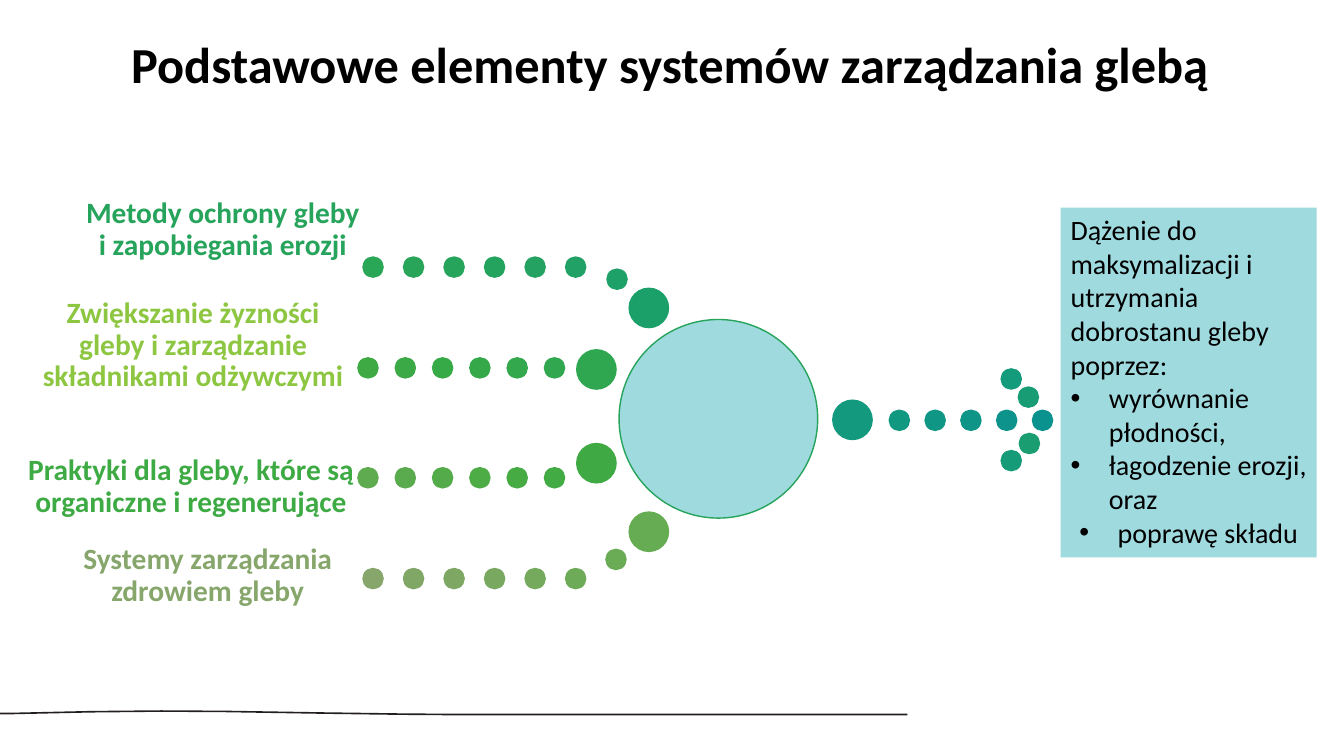
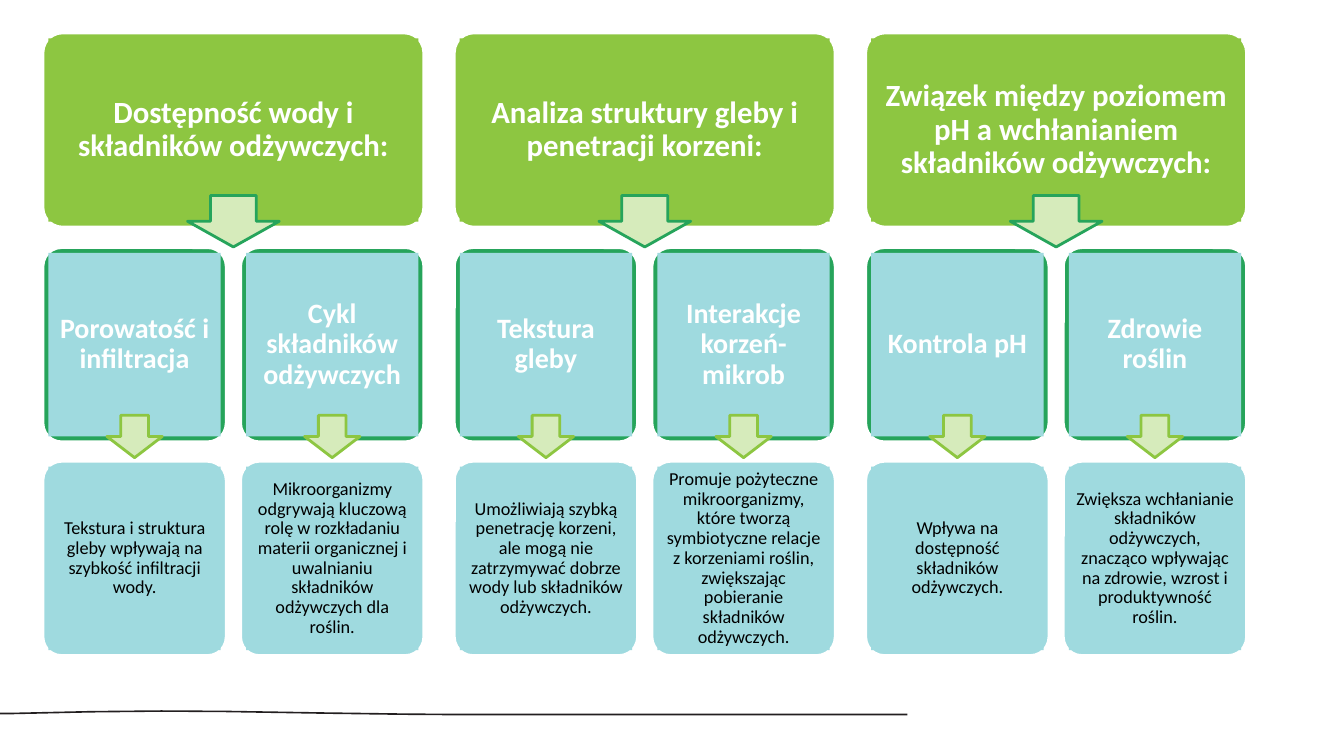
from lxml import etree
from pptx import Presentation
from pptx.dml.color import RGBColor
from pptx.enum.shapes import MSO_SHAPE
from pptx.enum.text import MSO_ANCHOR, PP_ALIGN
from pptx.oxml.ns import qn
from pptx.util import Inches, Pt

OVAL, RECT = MSO_SHAPE.OVAL, MSO_SHAPE.RECTANGLE
ROUNDED, DOWN_ARROW = MSO_SHAPE.ROUNDED_RECTANGLE, MSO_SHAPE.DOWN_ARROW
TOP, MIDDLE, BOTTOM = MSO_ANCHOR.TOP, MSO_ANCHOR.MIDDLE, MSO_ANCHOR.BOTTOM
LEFT, CENTER = PP_ALIGN.LEFT, PP_ALIGN.CENTER

FONT = "Calibri"
BLACK, WHITE, INK = "000000", "FFFFFF", "231F20"
AQUA, LIME, GREEN, PALE = "9FDADF", "8DC641", "26A45B", "D6EBBB"
SMALL_DOT, BIG_DOT = 0.2, 0.39

DOT_ROWS = [
    (8.82, 10.24, 4.07, "119881 0F9685 0E9588 0D938B 0A938E"),
    (3.6, 5.61, 2.55, "2AA657 28A558 26A45B 24A35F 23A261 21A165"),
    (3.55, 5.4, 3.55, "3DAA44 3BA946 37AA48 35A94A 33A84C 31A74F"),
    (3.55, 5.4, 4.64, "5FAB4F 59AB4D 53AC49 4EAC46 47AB44 42AB43"),
    (3.6, 5.61, 5.64, "86A66B 81A767 7EA764 79A861 75AA5C 6EAB58"),
]
SINGLE_DOTS = [
    (9.93, 3.66, SMALL_DOT, "139B7C"), (9.93, 4.47, SMALL_DOT, "169B78"),
    (10.1, 3.84, SMALL_DOT, "189C74"), (10.11, 4.3, SMALL_DOT, "199D71"),
    (6.02, 2.67, SMALL_DOT, "1EA168"), (6.01, 5.45, SMALL_DOT, "6AAB55"),
    (8.26, 3.97, BIG_DOT, "12997E"), (6.24, 2.86, BIG_DOT, "1CA06A"),
    (5.72, 3.47, BIG_DOT, "2FA751"), (5.72, 4.4, BIG_DOT, "3FAA44"),
    (6.24, 5.08, BIG_DOT, "65AC52"),
]
LABELS = [
    (0.84, 2.11, 2.74, 0.49, GREEN, "Metody ochrony gleby i zapobiegania erozji"),
    (0.35, 3.38, 3.13, 0.52, LIME,
     "Zwiększanie żyzności gleby i zarządzanie składnikami odżywczymi"),
    (0.27, 4.71, 3.25, 0.44, "3DAA44",
     "Praktyki dla gleby, które są organiczne i regenerujące"),
    (0.69, 5.54, 2.74, 0.49, "86A66B", "Systemy zarządzania zdrowiem gleby"),
]
GOALS = [
    ("wyrównanie płodności,", LEFT),
    ("łagodzenie erozji, oraz", LEFT),
    ("poprawę składu", CENTER),
]
TOPICS = [
    ("Dostępność wody i składników odżywczych:", [
        ("Porowatość i infiltracja",
         "Tekstura i struktura gleby wpływają na szybkość infiltracji wody."),
        ("Cykl składników odżywczych",
         "Mikroorganizmy odgrywają kluczową rolę w rozkładaniu materii "
         "organicznej i uwalnianiu składników odżywczych dla roślin."),
    ]),
    ("Analiza struktury gleby i penetracji korzeni:", [
        ("Tekstura gleby",
         "Umożliwiają szybką penetrację korzeni, ale mogą nie zatrzymywać "
         "dobrze wody lub składników odżywczych."),
        ("Interakcje korzeń-mikrob",
         "Promuje pożyteczne mikroorganizmy, które tworzą symbiotyczne relacje "
         "z korzeniami roślin, zwiększając pobieranie składników odżywczych."),
    ]),
    ("Związek między poziomem pH a wchłanianiem składników odżywczych:", [
        ("Kontrola pH", "Wpływa na dostępność składników odżywczych."),
        ("Zdrowie roślin",
         "Zwiększa wchłanianie składników odżywczych, znacząco wpływając na "
         "zdrowie, wzrost i produktywność roślin."),
    ]),
]


def rgb(value):
    return RGBColor.from_string(value)


def paint(shape, fill, line=None, weight=1):
    shape.shadow.inherit = False
    shape.fill.solid()
    shape.fill.fore_color.rgb = rgb(fill)
    if line:
        shape.line.color.rgb = rgb(line)
        shape.line.width = Pt(weight)
    else:
        shape.line.fill.background()


def add_box(slide, kind, left, top, width, height, fill, line=None, weight=1):
    box = slide.shapes.add_shape(
        kind, Inches(left), Inches(top), Inches(width), Inches(height))
    paint(box, fill, line, weight)
    return box


def set_frame(frame, anchor, side=0.1, edge=0.05):
    frame.word_wrap = True
    frame.vertical_anchor = anchor
    frame.margin_left = frame.margin_right = Inches(side)
    frame.margin_top = frame.margin_bottom = Inches(edge)


def add_run(paragraph, text, size, color, bold=False, align=CENTER, spacing=None):
    paragraph.alignment = align
    if spacing:
        paragraph.line_spacing = spacing
    run = paragraph.add_run()
    run.text = text
    run.font.name = FONT
    run.font.size = Pt(size)
    run.font.bold = bold
    run.font.color.rgb = rgb(color)


def add_bullet(paragraph, indent=0.38):
    properties = paragraph._p.get_or_add_pPr()
    properties.set("marL", str(Inches(indent)))
    properties.set("indent", str(-Inches(indent)))
    etree.SubElement(properties, qn("a:buFont")).set("typeface", "Arial")
    etree.SubElement(properties, qn("a:buChar")).set("char", "•")


def add_footer_line(prs, slide):
    upper = [(0, 7070), (140, 7070), (900, 7053), (1600, 7046), (2230, 7050),
             (3200, 7066), (4000, 7077), (4430, 7080), (9000, 7080)]
    lower = [(x, y + 16) for x, y in reversed(upper)]
    builder = slide.shapes.build_freeform(*upper[0], scale=Inches(1) / 1000)
    builder.add_line_segments(upper[1:] + lower, close=True)
    footer = builder.convert_to_shape()
    paint(footer, INK)
    prs.slide_master.shapes.element.append(footer.element)


def set_title(slide, text):
    title = slide.shapes.title
    title.left, title.top = Inches(0.73), Inches(0.28)
    title.width, title.height = Inches(11.83), Inches(0.71)
    set_frame(title.text_frame, TOP)
    add_run(title.text_frame.paragraphs[0], text, 36, BLACK, bold=True)


def add_dot(slide, left, top, size, color):
    add_box(slide, OVAL, left, top, size, size, color, color)


def add_dot_row(slide, first, last, top, colors):
    colors = colors.split()
    step = (last - first) / (len(colors) - 1)
    for index, color in enumerate(colors):
        add_dot(slide, first + index * step, top, SMALL_DOT, color)


def add_label(slide, left, top, width, height, color, text):
    label = slide.shapes.add_textbox(
        Inches(left), Inches(top), Inches(width), Inches(height))
    set_frame(label.text_frame, BOTTOM, 0, 0)
    add_run(label.text_frame.paragraphs[0], text, 21, color, True, spacing=0.9)


def add_goals_panel(slide):
    frame = add_box(slide, RECT, 10.52, 2.06, 2.54, 3.47, AQUA).text_frame
    set_frame(frame, TOP)
    add_run(frame.paragraphs[0],
            "Dążenie do maksymalizacji i utrzymania dobrostanu gleby poprzez:",
            20, BLACK, align=LEFT)
    for text, align in GOALS:
        goal = frame.add_paragraph()
        add_bullet(goal)
        add_run(goal, text, 20, BLACK, align=align)


def add_card(slide, left, top, width, border, fill, text, size, color, bold=True):
    height, inset = 1.92, 0.05
    outer = add_box(slide, ROUNDED, left, top, width, height, border, WHITE, 1.5)
    outer.adjustments[0] = 0.1
    inner = add_box(slide, RECT, left + inset, top + inset,
                    width - 2 * inset, height - 2 * inset, fill)
    set_frame(inner.text_frame, MIDDLE, 0.07, 0.07)
    add_run(inner.text_frame.paragraphs[0], text, size, color, bold, spacing=0.9)


def add_down_arrow(slide, center, top, width, height, line):
    add_box(slide, DOWN_ARROW, center - width / 2, top, width, height, PALE, line, 2)


def build_elements(slide):
    set_title(slide, "Podstawowe elementy systemów zarządzania glebą")
    add_box(slide, OVAL, 6.14, 3.17, 1.97, 1.97, AQUA, GREEN)
    for row in DOT_ROWS:
        add_dot_row(slide, *row)
    for dot in SINGLE_DOTS:
        add_dot(slide, *dot)
    for label in LABELS:
        add_label(slide, *label)
    add_goals_panel(slide)


def build_topics(slide):
    topic_width, part_width = 3.77, 1.81
    for column, (topic, parts) in enumerate(TOPICS):
        left = 0.43 + column * 4.08
        add_card(slide, left, 0.33, topic_width, LIME, LIME, topic, 22, WHITE)
        for index, (name, detail) in enumerate(parts):
            part_left = left + index * (topic_width - part_width)
            add_card(slide, part_left, 2.46, part_width, GREEN, AQUA, name, 20, WHITE)
            add_card(slide, part_left, 4.58, part_width, AQUA, AQUA, detail, 13,
                     BLACK, bold=False)
            add_down_arrow(slide, part_left + part_width / 2, 4.12, 0.55, 0.42, LIME)
        add_down_arrow(slide, left + topic_width / 2, 1.94, 0.91, 0.51, GREEN)


def main():
    prs = Presentation()
    prs.slide_width, prs.slide_height = Inches(13.33), Inches(7.5)
    title_only, blank = prs.slide_layouts[5], prs.slide_layouts[6]
    elements = prs.slides.add_slide(title_only)
    add_footer_line(prs, elements)
    build_elements(elements)
    build_topics(prs.slides.add_slide(blank))
    prs.save("out.pptx")


if __name__ == "__main__":
    main()
